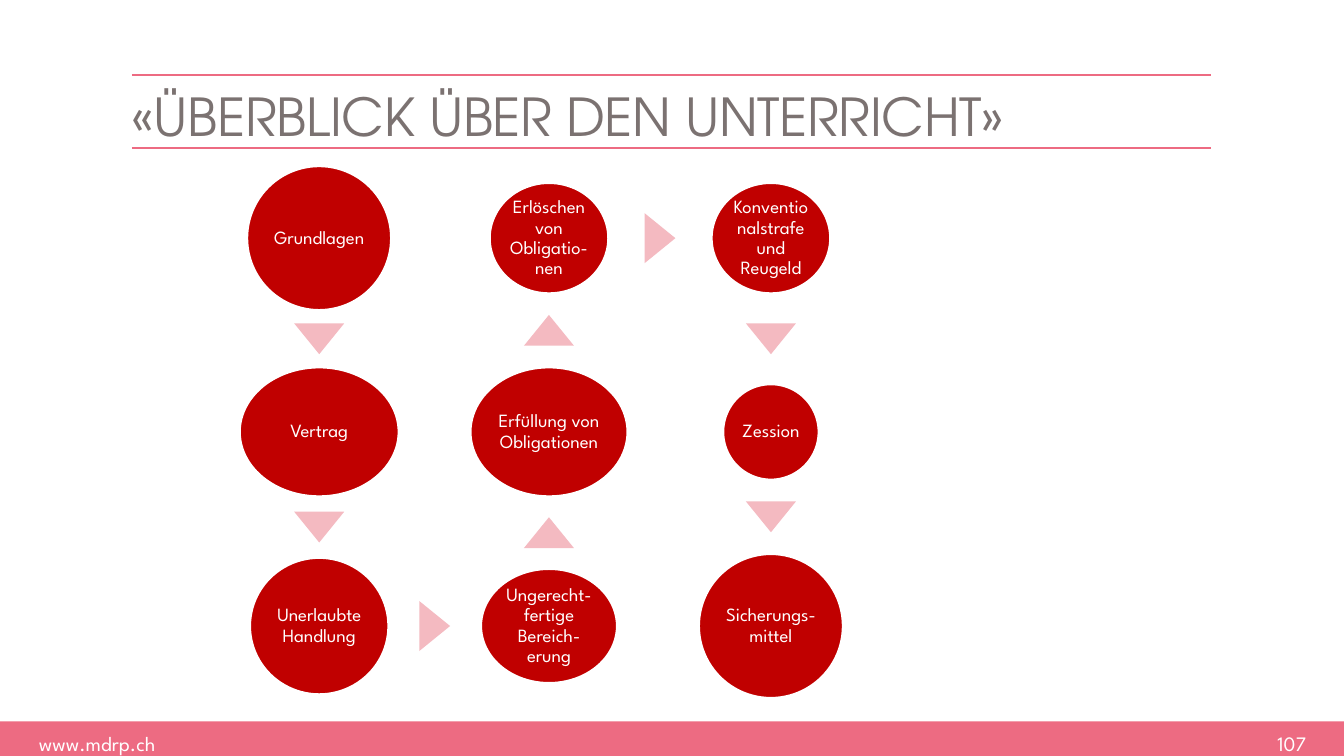
from itertools import pairwise

from pptx import Presentation
from pptx.dml.color import RGBColor
from pptx.enum import shapes, text
from pptx.oxml.ns import qn
from pptx.util import Pt

PINK = RGBColor(0xED, 0x6B, 0x82)
LIGHT_PINK = RGBColor(0xF4, 0xBA, 0xC1)
RED = RGBColor(0xC0, 0x00, 0x00)
GREY = RGBColor(0x7B, 0x72, 0x71)
WHITE = RGBColor(0xFF, 0xFF, 0xFF)
BODY_FONT = "League Spartan"
TITLE_FONT = "TeX Gyre Adventor"

COLUMNS = (171, 294.1, 413)
ROWS = (127.6, 231.4, 335.4)
TOPICS = [
    ("Grundlagen", 0, 0, 77, 77),
    ("Vertrag", 0, 1, 85, 69),
    ("Unerlaubte Handlung", 0, 2, 74, 73),
    ("Ungerecht-fertige Bereich-erung", 1, 2, 72.7, 61),
    ("Erfüllung von Obligationen", 1, 1, 84, 69),
    ("Erlöschen von Obligatio-nen", 1, 0, 63.4, 59),
    ("Konventionalstrafe und Reugeld", 2, 0, 63.4, 59),
    ("Zession", 2, 1, 51, 51),
    ("Sicherungs-mittel", 2, 2, 77, 77),
]
ARROW_WIDTH, ARROW_HEIGHT = 26.8, 16.5
MARGIN, CONTENT_WIDTH = 70.6, 578.4


def write(frame, wording, size, font, color, align, inset=0):
    frame.text = wording
    frame.word_wrap = True
    frame.auto_size = text.MSO_AUTO_SIZE.NONE
    frame.margin_left = frame.margin_right = Pt(inset)
    frame.margin_top = frame.margin_bottom = Pt(inset)
    paragraph = frame.paragraphs[0]
    paragraph.alignment = align
    run = paragraph.runs[0]
    run.font.size = Pt(size)
    run.font.name = font
    run.font.color.rgb = color
    return paragraph


def add_filled(slide, kind, left, top, width, height, color):
    shape = slide.shapes.add_shape(kind, Pt(left), Pt(top), Pt(width), Pt(height))
    shape.shadow.inherit = False
    shape.fill.solid()
    shape.fill.fore_color.rgb = color
    shape.line.fill.background()
    return shape


def add_rule(slide, y):
    rule = slide.shapes.add_connector(
        shapes.MSO_CONNECTOR.STRAIGHT,
        Pt(MARGIN), Pt(y), Pt(MARGIN + CONTENT_WIDTH), Pt(y))
    rule.line.color.rgb = PINK
    rule.line.width = Pt(1)
    properties = rule._element.spPr
    properties.append(properties.makeelement(qn("a:effectLst"), {}))


def add_title(slide, wording):
    title = slide.shapes.title
    title.left, title.top = Pt(MARGIN), Pt(40.3)
    title.width, title.height = Pt(CONTENT_WIDTH), Pt(37.4)
    heading = write(title.text_frame, wording, 28, TITLE_FONT, GREY, text.PP_ALIGN.LEFT)
    title.text_frame.vertical_anchor = text.MSO_ANCHOR.TOP
    heading.line_spacing = 1.14
    heading.runs[0].font._element.set("spc", "-10")


def add_footer_text(slide, wording, left, width, align):
    box = slide.shapes.add_textbox(Pt(left), Pt(391.7), Pt(width), Pt(13))
    write(box.text_frame, wording, 11, BODY_FONT, WHITE, align)


def add_topic(slide, wording, column, row, width, height):
    topic = add_filled(
        slide, shapes.MSO_SHAPE.OVAL,
        COLUMNS[column] - width / 2, ROWS[row] - height / 2, width, height, RED)
    topic.line.color.rgb = WHITE
    topic.line.width = Pt(1)
    label = write(topic.text_frame, wording, 10, BODY_FONT, WHITE,
                  text.PP_ALIGN.CENTER, 0.9)
    label.line_spacing = 0.9
    topic.text_frame.vertical_anchor = text.MSO_ANCHOR.MIDDLE


def gap_middle(start, end, start_size, end_size):
    direction = 1 if end > start else -1
    return (start + end + direction * (start_size - end_size) / 2) / 2


def add_arrow(slide, source, target):
    _, column, row, width, height = source
    _, next_column, next_row, next_width, next_height = target
    x, y = COLUMNS[column], ROWS[row]
    if column != next_column:
        x = gap_middle(x, COLUMNS[next_column], width, next_width)
        rotation = 90
    else:
        y = gap_middle(y, ROWS[next_row], height, next_height)
        rotation = 180 if next_row > row else 0
    arrow = add_filled(
        slide, shapes.MSO_SHAPE.ISOSCELES_TRIANGLE,
        x - ARROW_WIDTH / 2, y - ARROW_HEIGHT / 2,
        ARROW_WIDTH, ARROW_HEIGHT, LIGHT_PINK)
    arrow.rotation = rotation


def main():
    deck = Presentation()
    deck.slide_width, deck.slide_height = Pt(720), Pt(405)
    slide = deck.slides.add_slide(deck.slide_layouts[5])

    add_filled(slide, shapes.MSO_SHAPE.RECTANGLE, 0, 386.5, 720, 18.5, PINK)
    add_footer_text(slide, "www.mdrp.ch", 20.9, 73.4, text.PP_ALIGN.LEFT)
    add_footer_text(slide, "107", 655.9, 43.9, text.PP_ALIGN.RIGHT)
    for y in (40.2, 79.3):
        add_rule(slide, y)
    add_title(slide, "«ÜBERBLICK ÜBER DEN UNTERRICHT»")

    for topic in TOPICS:
        add_topic(slide, *topic)
    for source, target in pairwise(TOPICS):
        add_arrow(slide, source, target)

    deck.save("out.pptx")


if __name__ == "__main__":
    main()
